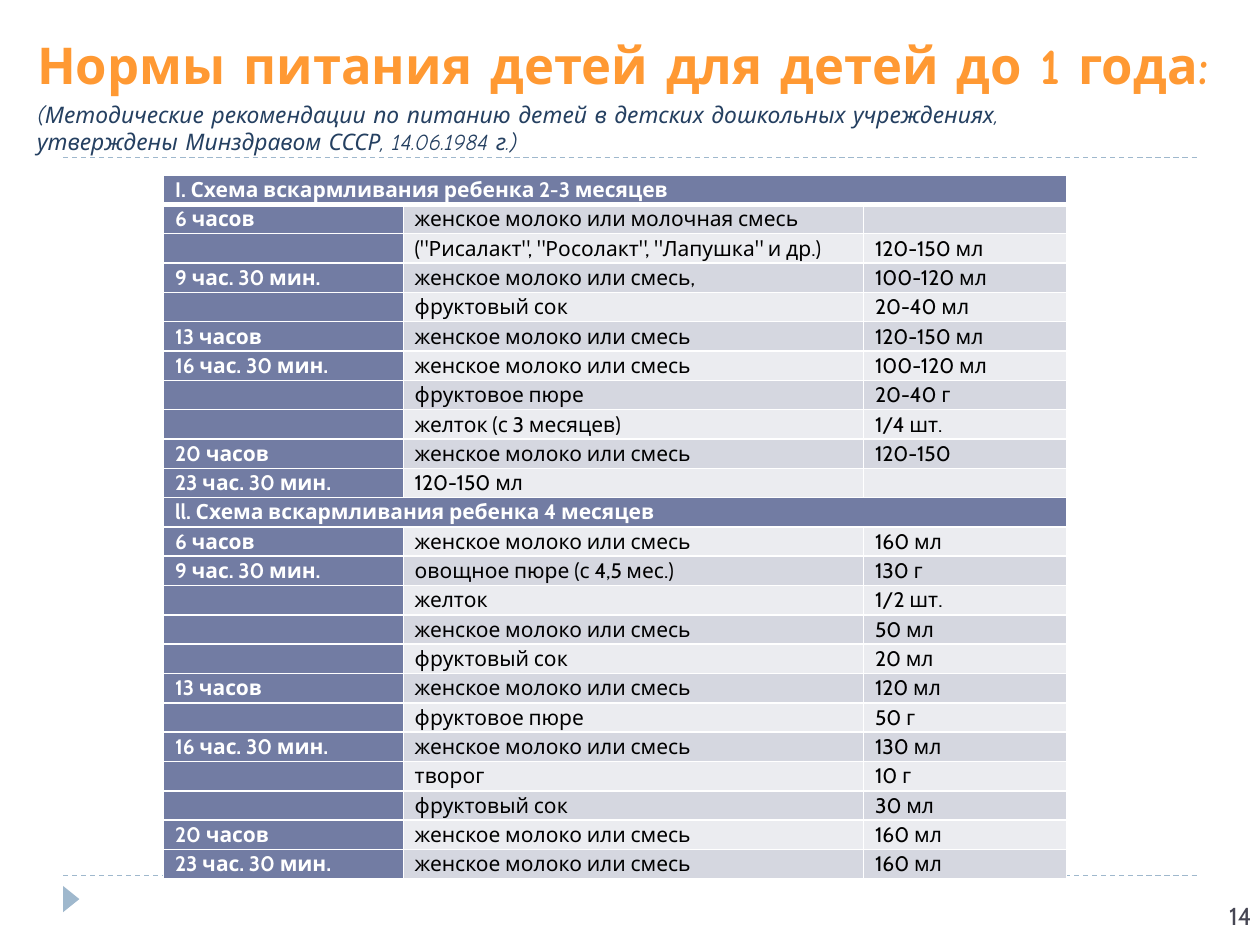
from dataclasses import dataclass

from lxml import etree
from pptx import Presentation
from pptx import util as u
from pptx.dml.color import RGBColor
from pptx.enum import dml, shapes, text
from pptx.oxml import ns


@dataclass(frozen=True)
class Theme:
    """Colours, fonts and type sizes of the slide."""

    accent: str = "FF9933"
    subtitle: str = "254061"
    number: str = "464653"
    rule: str = "9FB8CD"
    head: str = "727CA3"
    bands: tuple = ("EBECF0", "D5D7E0")
    light: str = "FFFFFF"
    dark: str = "000000"
    heading_font: str = "Comic Neue"
    body_font: str = "Cabin"
    title_size: float = 29
    subtitle_size: float = 13
    table_size: float = 12
    number_size: float = 14
    table_leading: float = 15.8


THEME = Theme()
MILK = "женское молоко или смесь"
FEEDING_ROWS = [
    ("I. Схема вскармливания ребенка 2-3 месяцев",),
    ("6 часов", "женское молоко или молочная смесь", ""),
    ("", '("Рисалакт", "Росолакт", "Лапушка" и др.)', "120-150 мл"),
    ("9 час. 30 мин.", MILK + ",", "100-120 мл"),
    ("", "фруктовый сок", "20-40 мл"),
    ("13 часов", MILK, "120-150 мл"),
    ("16 час. 30 мин.", MILK, "100-120 мл"),
    ("", "фруктовое пюре", "20-40 г"),
    ("", "желток (с 3 месяцев)", "1/4 шт."),
    ("20 часов", MILK, "120-150"),
    ("23 час. 30 мин.", "120-150 мл", ""),
    ("ll. Схема вскармливания ребенка 4 месяцев",),
    ("6 часов", MILK, "160 мл"),
    ("9 час. 30 мин.", "овощное пюре (с 4,5 мес.)", "130 г"),
    ("", "желток", "1/2 шт."),
    ("", MILK, "50 мл"),
    ("", "фруктовый сок", "20 мл"),
    ("13 часов", MILK, "120 мл"),
    ("", "фруктовое пюре", "50 г"),
    ("16 час. 30 мин.", MILK, "130 мл"),
    ("", "творог", "10 г"),
    ("", "фруктовый сок", "30 мл"),
    ("20 часов", MILK, "160 мл"),
    ("23 час. 30 мин.", MILK, "160 мл"),
]


def style_font(font, name, size, color, bold=False, italic=False):
    """Set every property of a font."""
    font.name, font.size = name, u.Pt(size)
    font.bold, font.italic = bold, italic
    font.color.rgb = RGBColor.from_string(color)


def add_text(slide, box, words, *font_style, anchor=text.MSO_ANCHOR.TOP, **emphasis):
    """Add a wrapped text box with one styled paragraph."""
    frame = slide.shapes.add_textbox(*map(u.Cm, box)).text_frame
    frame.word_wrap = True
    frame.vertical_anchor = anchor
    paragraph = frame.paragraphs[0]
    paragraph.text = words
    style_font(paragraph.font, *font_style, **emphasis)


def add_rule(slide, left, top, width):
    """Add a dashed horizontal rule."""
    rule = slide.shapes.add_connector(
        shapes.MSO_CONNECTOR.STRAIGHT, *map(u.Cm, (left, top, left + width, top)))
    rule.line.color.rgb = RGBColor.from_string(THEME.rule)
    rule.line.width = u.Pt(0.75)
    rule.line.dash_style = dml.MSO_LINE.DASH
    etree.SubElement(rule._element.spPr, ns.qn("a:effectLst"))


def add_frame(slide, box):
    """Add the two rules and the corner marker of the page frame."""
    left, top, width, height = box
    add_rule(slide, left, top, width)
    add_rule(slide, left, top + height, width)
    marker = slide.shapes.add_shape(
        shapes.MSO_SHAPE.ISOSCELES_TRIANGLE,
        *map(u.Cm, (left - 0.1, top + height + 0.31, 0.53, 0.33)))
    marker.rotation = 90
    marker.shadow.inherit = False
    marker.fill.solid()
    marker.fill.fore_color.rgb = RGBColor.from_string(THEME.rule)
    marker.line.fill.background()


def add_heading(slide, box):
    """Add the title and the source note below it."""
    left, top, width, height = box
    title_height = 1.7
    note_top = top + 1.57
    add_text(slide, (left, top, width, title_height),
             "Нормы питания детей для детей до 1 года:",
             THEME.heading_font, THEME.title_size, THEME.accent,
             bold=True, anchor=text.MSO_ANCHOR.BOTTOM)
    add_text(slide, (left, note_top, width - 2.41, top + height - note_top),
             "(Методические рекомендации по питанию детей в детских дошкольных "
             "учреждениях, утверждены Минздравом СССР, 14.06.1984 г.)",
             THEME.heading_font, THEME.subtitle_size, THEME.subtitle, italic=True)


def set_borders(cell, bottom_width):
    """Draw light borders around a table cell."""
    properties = cell._tc.get_or_add_tcPr()
    for side, width in (("L", 1), ("R", 1), ("T", 1), ("B", bottom_width)):
        line = etree.SubElement(properties, ns.qn(f"a:ln{side}"), w=str(u.Pt(width)))
        fill = etree.SubElement(line, ns.qn("a:solidFill"))
        etree.SubElement(fill, ns.qn("a:srgbClr"), val=THEME.light)


def style_cell(cell, words, fill, color, bold, bottom_width):
    """Fill in and format one table cell."""
    set_borders(cell, bottom_width)
    cell.fill.solid()
    cell.fill.fore_color.rgb = RGBColor.from_string(fill)
    cell.margin_left = cell.margin_right = u.Cm(0.23)
    cell.margin_top = cell.margin_bottom = 0
    paragraph = cell.text_frame.paragraphs[0]
    paragraph.text = words
    paragraph.line_spacing = u.Pt(THEME.table_leading)
    style_font(paragraph.font, THEME.body_font, THEME.table_size, color, bold=bold)


def add_feeding_table(slide, box):
    """Add the feeding schedule with section rows and banded data rows."""
    left, top, width, height = box
    time_width, amount_width = 4.83, 4.09
    widths = (time_width, width - time_width - amount_width, amount_width)
    table = slide.shapes.add_table(
        len(FEEDING_ROWS), len(widths), *map(u.Cm, box)).table
    table.first_row = table.horz_banding = False
    for column, column_width in zip(table.columns, widths):
        column.width = u.Cm(column_width)
    for index, values in enumerate(FEEDING_ROWS):
        table.rows[index].height = u.Cm(height / len(FEEDING_ROWS))
        is_section = len(values) == 1
        if is_section:
            table.cell(index, 0).merge(table.cell(index, len(widths) - 1))
            values += ("",) * (len(widths) - 1)
        for position, words in enumerate(values):
            is_head = is_section or position == 0
            style_cell(table.cell(index, position), words,
                       THEME.head if is_head else THEME.bands[index % 2],
                       THEME.light if is_head else THEME.dark,
                       is_head, 3 if index == 0 else 1)


def add_page_number(slide, box):
    """Add the page number."""
    add_text(slide, box, "14", THEME.body_font, THEME.number_size, THEME.number)


def main():
    """Build the slide and save it."""
    presentation = Presentation()
    presentation.slide_width, presentation.slide_height = u.Cm(25.4), u.Cm(19.05)
    slide = presentation.slides.add_slide(presentation.slide_layouts[6])
    add_frame(slide, (1.27, 3.17, 22.86, 14.48))
    add_heading(slide, (0.5, 0.33, 24.41, 3.7))
    add_feeding_table(slide, (3.3, 3.53, 18.2, 14.2))
    add_page_number(slide, (24.53, 18.03, 1.73, 1.02))
    presentation.save("out.pptx")


if __name__ == "__main__":
    main()
